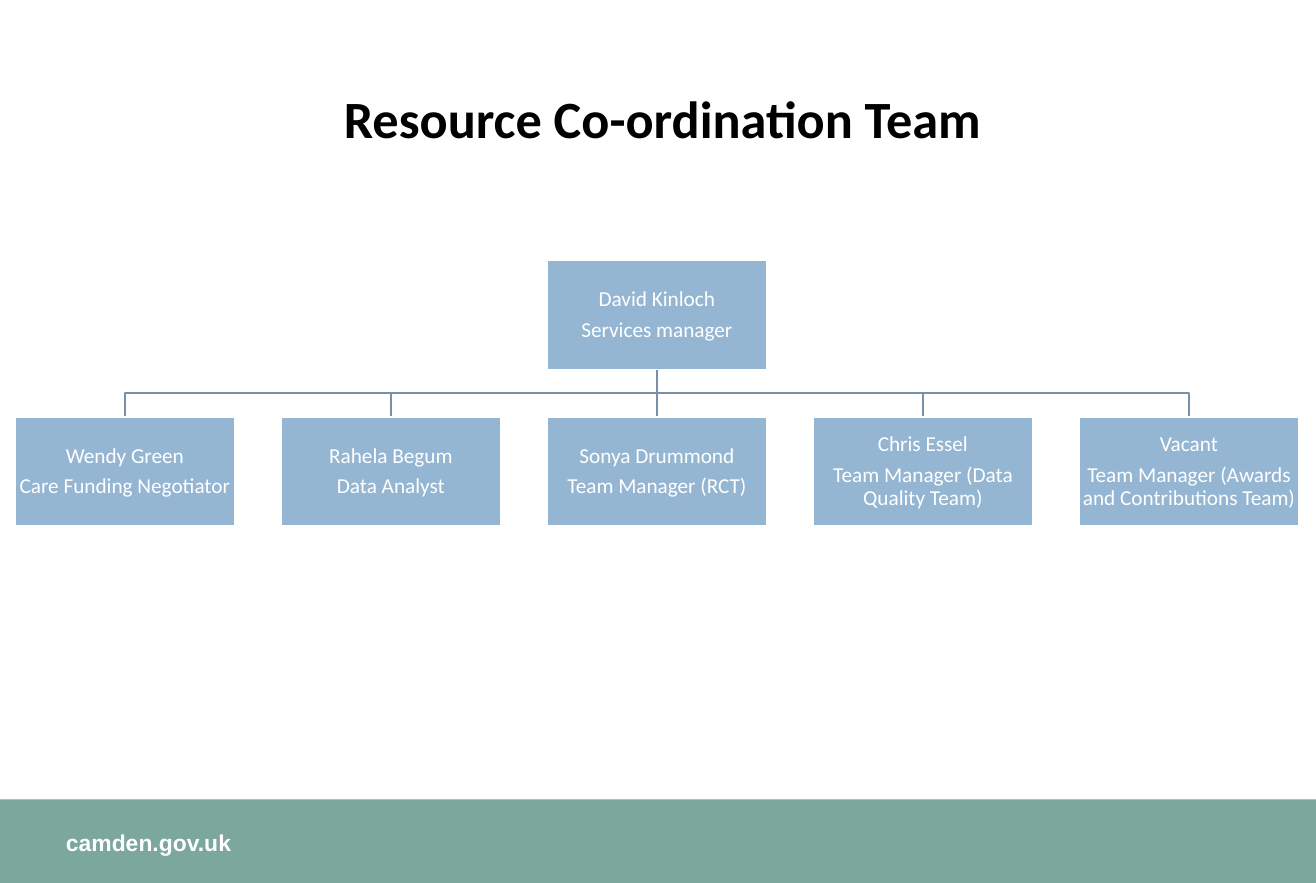
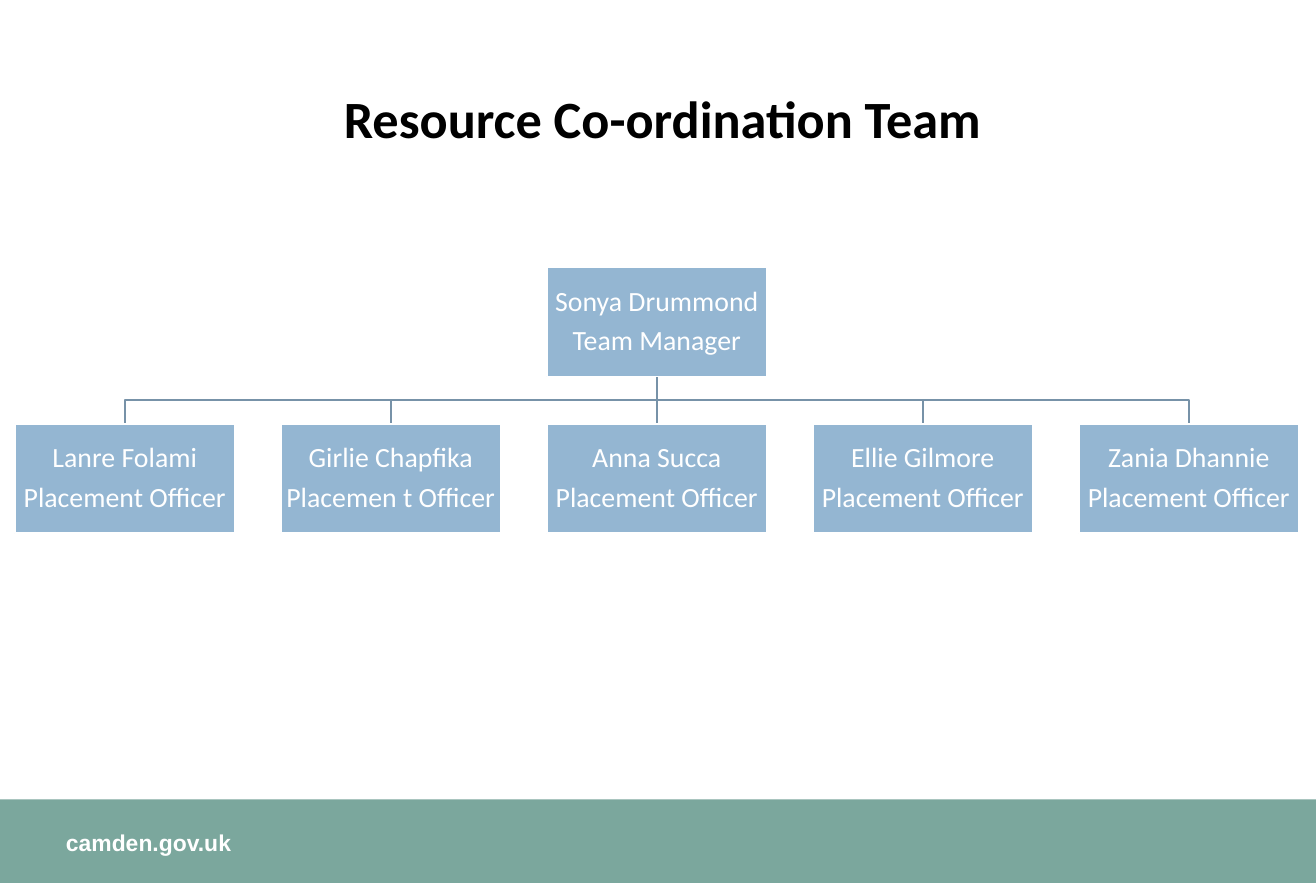
"""Build two organisation charts of the Resource Co-ordination Team."""
from lxml import etree
from pptx import Presentation
from pptx.dml.color import RGBColor
from pptx.enum.shapes import MSO_CONNECTOR, MSO_SHAPE
from pptx.enum.text import MSO_ANCHOR, PP_ALIGN
from pptx.oxml.ns import qn
from pptx.util import Inches, Pt

RECTANGLE = MSO_SHAPE.RECTANGLE
STRAIGHT = MSO_CONNECTOR.STRAIGHT
MIDDLE = MSO_ANCHOR.MIDDLE
CENTER, LEFT = PP_ALIGN.CENTER, PP_ALIGN.LEFT

COLOURS = {"band": "7BA79D", "box": "94B6D2", "line": "7792A8", "white": "FFFFFF", "black": "000000"}
TITLE = "Resource Co-ordination Team"
ADDRESS = "camden.gov.uk"
CHARTS = [
    {
        "top": 2.21,
        "size": 13,
        "lead": ("David Kinloch", "Services manager"),
        "staff": [
            ("Wendy Green", "Care Funding Negotiator"),
            ("Rahela Begum", "Data Analyst"),
            ("Sonya Drummond", "Team Manager (RCT)"),
            ("Chris Essel", "Team Manager (Data Quality Team)"),
            ("Vacant", "Team Manager (Awards and Contributions Team)"),
        ],
    },
    {
        "top": 2.27,
        "size": 17,
        "lead": ("Sonya Drummond", "Team Manager"),
        "staff": [
            ("Lanre Folami", "Placement Officer"),
            ("Girlie Chapfika", "Placemen t Officer"),
            ("Anna Succa", "Placement Officer"),
            ("Ellie Gilmore", "Placement Officer"),
            ("Zania Dhannie", "Placement Officer"),
        ],
    },
]

WIDTH, HEIGHT = 11.18, 7.5
BAND_TOP = 6.79
CHART_CENTRE = 5.58
BOX_WIDTH, BOX_HEIGHT = 1.87, 0.93
PITCH, GAP = 2.26, 0.4


def colour(name):
    return RGBColor.from_string(COLOURS[name])


def inches(*lengths):
    return [Inches(length) for length in lengths]


def set_insets(frame, left, top, right, bottom):
    frame.margin_left, frame.margin_top, frame.margin_right, frame.margin_bottom = inches(
        left, top, right, bottom)


def write(frame, lines, font, size, ink, bold=False, align=CENTER, spacing=None, after=None):
    frame.word_wrap = True
    frame.text = "\n".join(lines)
    for para in frame.paragraphs:
        para.alignment = align
        para.line_spacing = spacing
        para.space_after = after
        for span in para.runs:
            span.font.name, span.font.size, span.font.bold = font, Pt(size), bold
            span.font.color.rgb = colour(ink)


def add_box(slide, left, top, width, height, fill, outline=None):
    box = slide.shapes.add_shape(RECTANGLE, *inches(left, top, width, height))
    box.shadow.inherit = False
    box.fill.solid()
    box.fill.fore_color.rgb = colour(fill)
    if outline:
        box.line.color.rgb = colour(outline)
        box.line.width = Pt(1)
    else:
        box.line.fill.background()
    return box


def prepare_layout(layout):
    for holder in list(layout.placeholders):
        if holder.placeholder_format.idx:
            holder.element.getparent().remove(holder.element)
        else:
            holder.left, holder.top, holder.width, holder.height = inches(0.81, 0.62, 9.64, 0.82)


def add_footer(slide, layout):
    band = add_box(slide, 0, BAND_TOP, WIDTH, HEIGHT - BAND_TOP, "band")
    address = slide.shapes.add_textbox(*inches(0.56, 7.04, 4.61, 0.24))
    set_insets(address.text_frame, 0, 0, 0.1, 0)
    write(address.text_frame, [ADDRESS], "Arial", 14, "white", bold=True, align=LEFT)
    for shape in (band, address):
        layout.shapes.element.append(shape.element)


def add_link(slide, centre, top):
    bottom, bend = top + GAP, top + GAP / 2
    if centre == CHART_CENTRE:
        link = slide.shapes.add_connector(STRAIGHT, *inches(centre, top, centre, bottom))
        etree.SubElement(link.element.spPr, qn("a:effectLst"))
    else:
        points = [(CHART_CENTRE, bend), (centre, bend), (centre, bottom)]
        outline = slide.shapes.build_freeform(*inches(CHART_CENTRE, top))
        outline.add_line_segments([inches(*point) for point in points], close=False)
        link = outline.convert_to_shape()
        link.shadow.inherit = False
        link.fill.background()
    link.line.color.rgb = colour("line")
    link.line.width = Pt(1)


def add_person(slide, person, centre, top, size):
    box = add_box(slide, centre - BOX_WIDTH / 2, top, BOX_WIDTH, BOX_HEIGHT, "box", "white")
    frame = box.text_frame
    frame.vertical_anchor = MIDDLE
    set_insets(frame, 0.01, 0.01, 0.01, 0.01)
    write(frame, person, "Calibri", size, "white", spacing=0.9, after=Pt(0.35 * size))


def add_chart(slide, chart):
    top, size, staff = chart["top"], chart["size"], chart["staff"]
    middle = len(staff) // 2
    centres = [CHART_CENTRE + PITCH * (column - middle) for column in range(len(staff))]
    for centre in reversed(centres):
        add_link(slide, centre, top + BOX_HEIGHT)
    add_person(slide, chart["lead"], CHART_CENTRE, top, size)
    for person, centre in zip(staff, centres):
        add_person(slide, person, centre, top + BOX_HEIGHT + GAP, size)


def main():
    deck = Presentation()
    deck.slide_width, deck.slide_height = inches(WIDTH, HEIGHT)
    layout = deck.slide_layouts.get_by_name("Title Only")
    prepare_layout(layout)
    for number, chart in enumerate(CHARTS):
        slide = deck.slides.add_slide(layout)
        if number == 0:
            add_footer(slide, layout)
        title = slide.shapes.title.text_frame
        title.vertical_anchor = MIDDLE
        write(title, [TITLE], "Calibri", 32, "black", bold=True, spacing=0.9)
        add_chart(slide, chart)
    deck.save("out.pptx")


if __name__ == "__main__":
    main()
